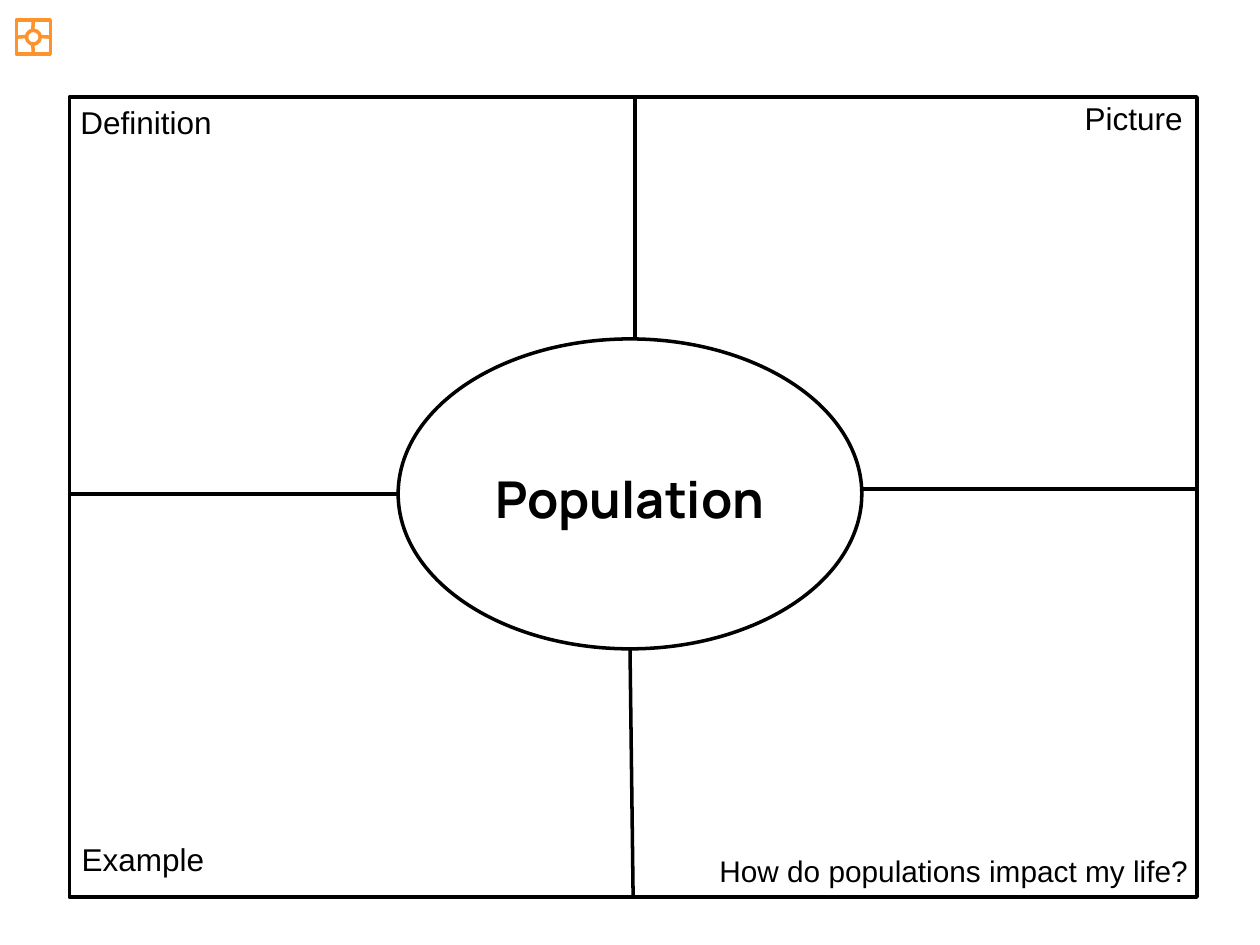
"""Build a Frayer model slide about the word Population."""
from typing import NamedTuple, Optional

from lxml.etree import SubElement
from pptx import Presentation
from pptx.dml.color import RGBColor
from pptx.enum.shapes import MSO_CONNECTOR, MSO_SHAPE
from pptx.enum.text import MSO_AUTO_SIZE, PP_ALIGN
from pptx.oxml.ns import qn
from pptx.util import Inches, Pt

BLACK = RGBColor(0x00, 0x00, 0x00)
WHITE = RGBColor(0xFF, 0xFF, 0xFF)
ORANGE = RGBColor(0xFF, 0x93, 0x2B)
TOP, LEFT, BOTTOM, RIGHT = range(4)


class Box(NamedTuple):
    left: float
    top: float
    width: float
    height: float


class Divider(NamedTuple):
    start: tuple[float, float]
    end: tuple[float, float]
    frame_side: Optional[int] = None


class Label(NamedTuple):
    text: str
    box: Box
    size: int = 18
    font: str = "Arial"
    bold: bool = False
    align: PP_ALIGN = PP_ALIGN.LEFT
    wrap: bool = False


FRAME = Box(0.55, 0.77, 8.95, 6.35)
OVAL = Box(3.16, 2.69, 3.68, 2.46)
DIVIDERS = [
    Divider((5.04, 0.77), (5.04, 2.69)),
    Divider((5.02, 7.12), (5, 5.15), BOTTOM),
    Divider((0.55, 3.92), (3.16, 3.92)),
    Divider((9.5, 3.88), (6.84, 3.88)),
]

ICON_FRAME = Box(0.13, 0.16, 0.27, 0.27)
ICON_OVAL = Box(0.21, 0.24, 0.11, 0.11)
ICON_DIVIDERS = [
    Divider((0.26, 0.16), (0.26, 0.24), TOP),
    Divider((0.26, 0.43), (0.26, 0.35), BOTTOM),
    Divider((0.13, 0.29), (0.21, 0.29), LEFT),
    Divider((0.4, 0.29), (0.32, 0.29), RIGHT),
]

LABELS = [
    Label("Population", Box(3.27, 3.66, 3.46, 0.59), size=29, font="Manrope",
          bold=True, align=PP_ALIGN.CENTER, wrap=True),
    Label("Definition", Box(0.54, 0.77, 1.25, 0.4)),
    Label("Example", Box(0.55, 6.62, 1.18, 0.4)),
    Label("Picture", Box(8.51, 0.74, 0.99, 0.4)),
    Label("How do populations impact my life?", Box(4.6, 6.72, 4.93, 0.39),
          size=17, align=PP_ALIGN.RIGHT, wrap=True),
]


def add_outline(s, kind: MSO_SHAPE, box: Box, color: RGBColor,
                fill: Optional[RGBColor] = None):
    sp = s.shapes.add_shape(kind, *map(Inches, box))
    sp.shadow.inherit = False
    if fill is None:
        sp.fill.background()
    else:
        sp.fill.solid()
        sp.fill.fore_color.rgb = fill
    sp.line.color.rgb = color
    sp.line.width = Pt(2)
    return sp


def add_divider(s, divider: Divider, frame, color: RGBColor) -> None:
    line = s.shapes.add_connector(
        MSO_CONNECTOR.STRAIGHT, *map(Inches, divider.start + divider.end))
    line.line.color.rgb = color
    line.line.width = Pt(2)
    SubElement(line.element.spPr, qn("a:effectLst"))
    if divider.frame_side is not None:
        line.begin_connect(frame, divider.frame_side)


def add_frayer_grid(s, frame_box: Box, oval_box: Box,
                    dividers: list[Divider], color: RGBColor) -> None:
    frame = add_outline(s, MSO_SHAPE.RECTANGLE, frame_box, color)
    for divider in dividers:
        add_divider(s, divider, frame, color)
    add_outline(s, MSO_SHAPE.OVAL, oval_box, color, WHITE)


def add_text(s, text: str, *, box: Box, size: int, font: str, bold: bool,
             align: PP_ALIGN, wrap: bool) -> None:
    tf = s.shapes.add_textbox(*map(Inches, box)).text_frame
    tf.word_wrap = wrap
    tf.auto_size = MSO_AUTO_SIZE.SHAPE_TO_FIT_TEXT
    p = tf.paragraphs[0]
    p.alignment = align
    r = p.add_run()
    r.text = text
    r.font.name = font
    r.font.size = Pt(size)
    r.font.bold = bold
    r.font.color.rgb = BLACK


def main() -> None:
    prs = Presentation()
    prs.slide_width, prs.slide_height = Inches(10), Inches(7.5)
    s = prs.slides.add_slide(prs.slide_layouts[6])
    add_frayer_grid(s, FRAME, OVAL, DIVIDERS, BLACK)
    for label in LABELS:
        add_text(s, **label._asdict())
    add_frayer_grid(s, ICON_FRAME, ICON_OVAL, ICON_DIVIDERS, ORANGE)
    prs.save("out.pptx")


if __name__ == "__main__":
    main()
